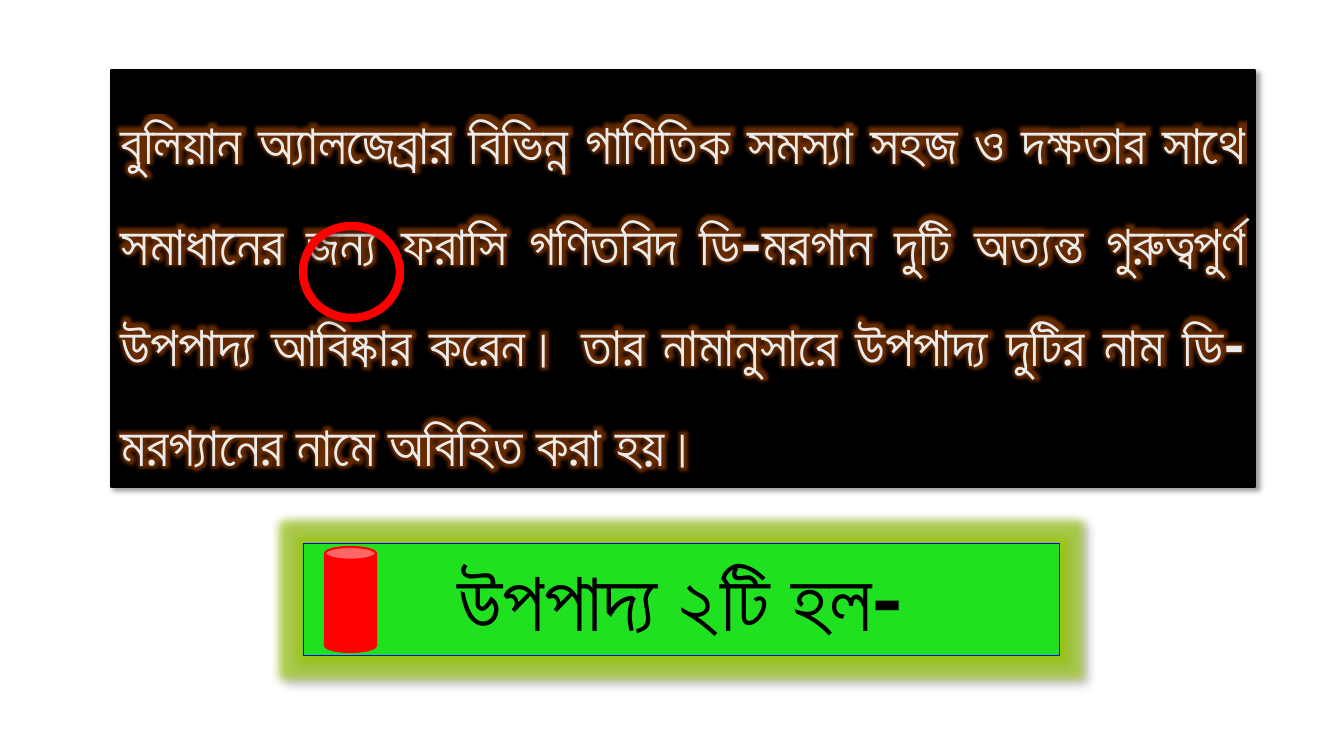
from lxml.etree import SubElement
from pptx import Presentation
from pptx.dml.color import RGBColor
from pptx.enum.shapes import MSO_SHAPE as SHAPE
from pptx.enum.text import MSO_ANCHOR as ANCHOR, PP_ALIGN as ALIGN
from pptx.oxml.ns import qn
from pptx.util import Pt

# Content
INTRO = ("বুলিয়ান অ্যালজেব্রার বিভিন্ন গাণিতিক সমস্যা সহজ ও দক্ষতার সাথে সমাধানের জন্য "
         "ফরাসি গণিতবিদ ডি-মরগান দুটি অত্যন্ত গুরুত্বপুর্ণ উপপাদ্য আবিষ্কার করেন। "
         "তার নামানুসারে উপপাদ্য দুটির নাম ডি-মরগ্যানের নামে অবিহিত করা হয়।")
HEADING = "উপপাদ্য ২টি হল-"
FONT = "Roboto"

# Places in px: left, top, width, height
INTRO_BOX = (111, 70, 1144, 417)
RING_BOX = (303, 226, 97, 92)
HEADING_BOX = (303, 543, 756, 112)
CAN_BOX = (325, 547, 51, 105)

# Glows: colour, opacity in percent, radius in points
TEXT_GLOW = ("FF6A00", 40, 8)
BOX_GLOW = ("99CC00", 60, 11)

PX = 914400 / 100.8


def px(value):
    return round(value * PX)


def color(text):
    return RGBColor.from_string(text)


def add_color(parent, text, opacity=100):
    element = SubElement(parent, qn("a:srgbClr"), val=text)
    if opacity < 100:
        SubElement(element, qn("a:alpha"), val=str(opacity * 1000))


def add_glow(effects, text, opacity, radius):
    glow = SubElement(effects, qn("a:glow"), rad=str(Pt(radius)))
    add_color(glow, text, opacity)


def add_shape(kind, box, line, line_width, fill=None, shadow=True, glow=None):
    shape = slide.shapes.add_shape(kind, *map(px, box))
    if fill:
        shape.fill.solid()
        shape.fill.fore_color.rgb = color(fill)
    else:
        shape.fill.background()
    shape.line.color.rgb = color(line)
    shape.line.width = Pt(line_width)
    shape.shadow.inherit = False
    effects = shape._element.spPr.find(qn("a:effectLst"))
    if glow:
        add_glow(effects, *glow)
    if shadow:
        outer = SubElement(effects, qn("a:outerShdw"), blurRad=str(Pt(4)), dist=str(Pt(3)),
                           dir=str(45 * 60000), algn="tl", rotWithShape="0")
        add_color(outer, "000000", 40)
    return shape


def write(shape, text, size, fill, outline, outline_width, align, spacing=None, glow=None):
    frame = shape.text_frame
    frame.word_wrap = True
    frame.vertical_anchor = ANCHOR.TOP
    paragraph = frame.paragraphs[0]
    paragraph.alignment = align
    paragraph.line_spacing = spacing
    run = paragraph.add_run()
    run.text = text
    run.font.size = Pt(size)
    run.font.bold = True
    run.font.color.rgb = color(fill)
    properties = run.font._element
    # Letter outline goes before the fill, the glow after it
    line = SubElement(properties, qn("a:ln"), w=str(Pt(outline_width)))
    add_color(SubElement(line, qn("a:solidFill")), outline)
    properties.insert(0, line)
    if glow:
        add_glow(SubElement(properties, qn("a:effectLst")), *glow)
    for script in ("a:latin", "a:cs"):
        SubElement(properties, qn(script), typeface=FONT)


presentation = Presentation()
presentation.slide_width = px(1344)
presentation.slide_height = px(756)
slide = presentation.slides.add_slide(presentation.slide_layouts[6])

# Introduction with a ring over it
intro = add_shape(SHAPE.RECTANGLE, INTRO_BOX, "000000", 1, fill="000000")
write(intro, INTRO, 40, "EBEBEB", "66FF99", 0.75, ALIGN.JUSTIFY, spacing=1.5, glow=TEXT_GLOW)
add_shape(SHAPE.OVAL, RING_BOX, "FF0000", 6)

# Heading with a can on its left
heading = add_shape(SHAPE.RECTANGLE, HEADING_BOX, "0000FF", 0.25, fill="1FE11F", glow=BOX_GLOW)
write(heading, HEADING, 60, "000000", "C42F1A", 0.8, ALIGN.CENTER)
add_shape(SHAPE.CAN, CAN_BOX, "FF0000", 1.5, fill="FF0000", shadow=False)

presentation.save("out.pptx")
